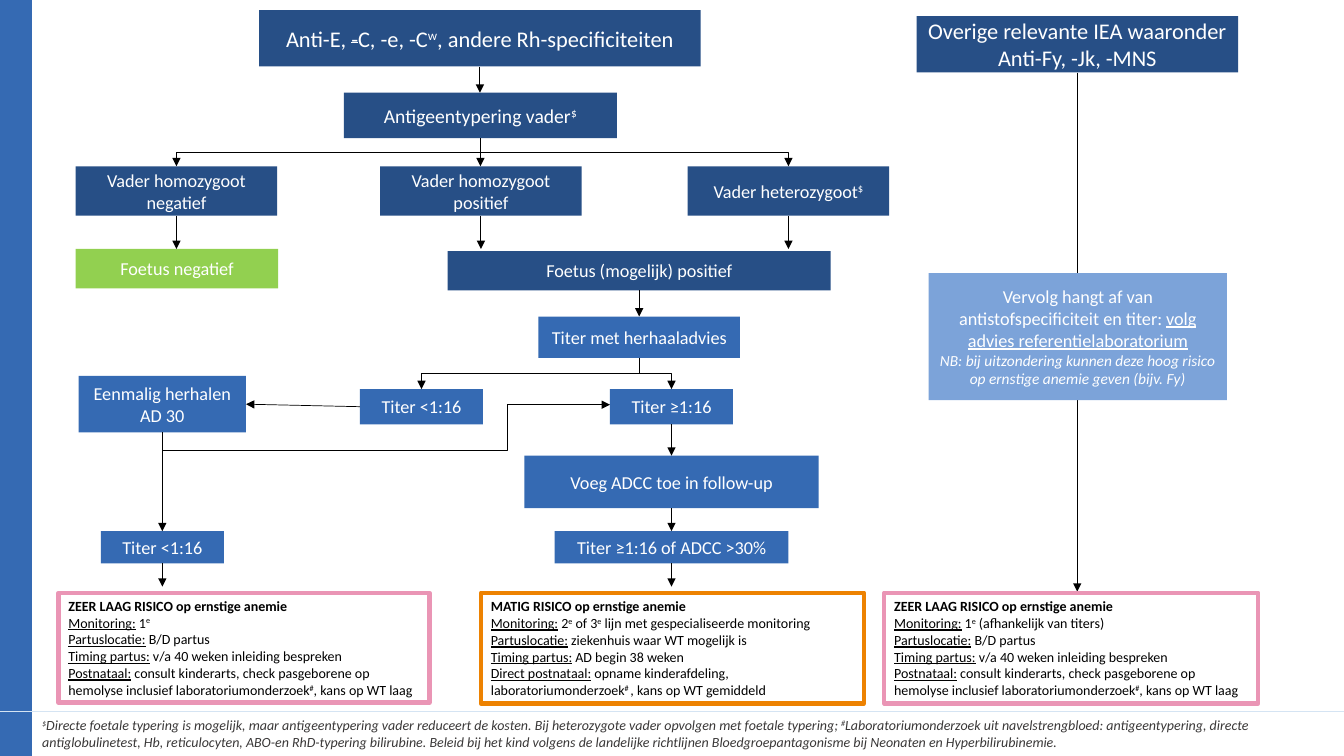
from dataclasses import dataclass

from lxml import etree
from pptx import Presentation
from pptx import util as u
from pptx.dml import color as dml
from pptx.enum import shapes, text
from pptx.oxml import ns

FONT = "Calibri"
COLORS = {
    "navy": "274F86", "blue": "356AB3", "light": "7CA3D9", "green": "92D050",
    "pink": "EA95B5", "orange": "ED8201", "rule": "D5E4F3",
    "grey": "3A3838", "black": "000000", "white": "FFFFFF",
}


def rgb(name):
    return dml.RGBColor.from_string(COLORS[name])


def add_paragraph(frame, runs, size=13, color="white", align=None):
    """Runs are (text, marks); marks: b, i, u, s (strike), ^ (superscript)."""
    first = frame.paragraphs[0]
    paragraph = frame.add_paragraph() if first.runs else first
    paragraph.alignment = align
    for words, marks in runs:
        run = paragraph.add_run()
        run.text = words
        font = run.font
        font.name, font.size, font.color.rgb = FONT, u.Pt(size), rgb(color)
        font.bold, font.italic, font.underline = (mark in marks for mark in "biu")
        properties = run._r.get_or_add_rPr()
        if "s" in marks:
            properties.set("strike", "sngStrike")
        if "^" in marks:
            properties.set("baseline", "30000")


@dataclass
class Box:
    left: float
    top: float
    width: float
    height: float

    @property
    def center(self):
        return self.left + self.width / 2

    @property
    def middle(self):
        return self.top + self.height / 2

    @property
    def bottom(self):
        return self.top + self.height

    @property
    def right(self):
        return self.left + self.width


@dataclass
class Region:
    """A part of the slide; everything in it is measured from its corner."""
    slide: object
    left: float
    top: float

    def rectangle(self, box, fill=None, line=None, weight=1):
        shape = self.slide.shapes.add_shape(
            shapes.MSO_SHAPE.RECTANGLE, u.Inches(self.left + box.left),
            u.Inches(self.top + box.top), u.Inches(box.width), u.Inches(box.height))
        shape.shadow.inherit = False
        if fill:
            shape.fill.solid()
            shape.fill.fore_color.rgb = rgb(fill)
        else:
            shape.fill.background()
        if line:
            shape.line.color.rgb = rgb(line)
            shape.line.width = u.Pt(weight)
        else:
            shape.line.fill.background()
        shape.text_frame.word_wrap = True
        shape.text_frame.vertical_anchor = text.MSO_ANCHOR.MIDDLE
        return shape

    def node(self, at, words, fill="blue", size=13):
        box = Box(*at)
        runs = [(words, "")] if isinstance(words, str) else words
        frame = self.rectangle(box, fill).text_frame
        add_paragraph(frame, runs, size, align=text.PP_ALIGN.CENTER)
        return box

    def connect(self, start, end, kind=shapes.MSO_CONNECTOR.STRAIGHT,
                color="black", weight=0.75, arrow=True):
        connector = self.slide.shapes.add_connector(
            kind, u.Inches(self.left + start[0]), u.Inches(self.top + start[1]),
            u.Inches(self.left + end[0]), u.Inches(self.top + end[1]))
        connector.line.color.rgb = rgb(color)
        connector.line.width = u.Pt(weight)
        if arrow:
            line = connector.line._get_or_add_ln()
            etree.SubElement(line, ns.qn("a:tailEnd"), type="triangle")
        etree.SubElement(connector._element.spPr, ns.qn("a:effectLst"))
        return connector

    def down(self, upper, lower_edge, weight=0.75):
        self.connect((upper.center, upper.bottom), (upper.center, lower_edge),
                     weight=weight)

    def elbow(self, start, end, rotation, flips="", bends=(), weight=0.75):
        """An elbow that leaves its start vertically: a turned preset."""
        (x1, y1), (x2, y2) = start, end
        width, height = abs(y2 - y1), abs(x2 - x1)
        left, top = (x1 + x2 - width) / 2, (y1 + y2 - height) / 2
        connector = self.connect((left, top), (left + width, top + height),
                                 shapes.MSO_CONNECTOR.ELBOW, weight=weight)
        properties = connector._element.spPr
        properties.xfrm.set("rot", str(rotation * 60000))
        for flip in flips:
            properties.xfrm.set("flip" + flip, "1")
        if bends:
            geometry = properties.find(ns.qn("a:prstGeom"))
            geometry.set("prst", f"bentConnector{len(bends) + 2}")
            for number, bend in enumerate(bends, 1):
                etree.SubElement(geometry.find(ns.qn("a:avLst")), ns.qn("a:gd"),
                                 name=f"adj{number}", fmla=f"val {round(bend * 100000)}")

    def branch(self, upper, lower):
        rotation, flips = (90, "") if lower.center < upper.center else (270, "H")
        self.elbow((upper.center, upper.bottom), (lower.center, lower.top),
                   rotation, flips)


def rhesus_flow(slide, left, top):
    region = Region(slide, left, top)
    # Antibody and typing of the father
    antibody = region.node(
        (1.82, 0, 4.38, 0.56),
        [("Anti-E, ", ""), ("-", "s"), ("C, -e, -C", ""), ("w", "^"),
         (", andere Rh-specificiteiten", "")], "navy", 16)
    typing = region.node((2.66, 0.82, 2.71, 0.45),
                         [("Antigeentypering vader", ""), ("$", "^")], "navy", 14)
    negative, positive, mixed = (
        region.node((x, 1.55, 2, 0.49), words, "navy") for x, words in (
            (0, "Vader homozygoot negatief"),
            (3.02, "Vader homozygoot positief"),
            (6.07, [("Vader heterozygoot", ""), ("$", "^")])))
    # Foetus and titers
    foetus_negative = region.node((0, 2.37, 2.01, 0.39), "Foetus negatief", "green")
    foetus = region.node((3.69, 2.39, 3.8, 0.39), "Foetus (mogelijk) positief", "navy")
    titer = region.node((4.59, 3.04, 2, 0.41), "Titer met herhaaladvies")
    low = region.node((2.82, 3.76, 1.22, 0.35), "Titer <1:16")
    high = region.node((5.3, 3.76, 1.22, 0.35), "Titer ≥1:16")
    repeat = region.node((0.03, 3.63, 1.66, 0.56), "Eenmalig herhalen AD 30")
    follow_up = region.node((4.45, 4.42, 2.92, 0.52), "Voeg ADCC toe in follow-up")
    low_result = region.node((0.25, 5.17, 1.22, 0.32), "Titer <1:16")
    high_result = region.node((4.75, 5.17, 2.32, 0.32), "Titer ≥1:16 of ADCC >30%")
    # Arrows
    for upper, lower in ((antibody, typing), (typing, positive),
                         (negative, foetus_negative), (foetus, titer)):
        region.down(upper, lower.top)
    for father in (positive, mixed):
        region.down(father, foetus_negative.top)
    for upper, lower in ((high, follow_up), (follow_up, high_result),
                         (repeat, low_result)):
        region.down(upper, lower.top, 0.5)
    for result in (low_result, high_result):
        region.down(result, 5.72, 0.5)
    for upper, lower in ((typing, negative), (typing, mixed), (titer, low), (titer, high)):
        region.branch(upper, lower)
    region.connect((low.left, low.middle), (repeat.right, repeat.middle), weight=0.5)
    region.elbow((repeat.center, repeat.bottom), (high.left, high.middle - 0.02),
                 90, "HV", (-0.66, 0.77), 0.5)


def other_flow(slide, left, top):
    region = Region(slide, left, top)
    header = region.node((0, 0, 3.19, 0.56),
                         "Overige relevante IEA waaronder Anti-Fy, -Jk, -MNS", "navy", 16)
    region.down(header, 5.71)
    # Advice over the long arrow
    frame = region.rectangle(Box(0.12, 2.55, 2.96, 1.26), "light").text_frame
    center = text.PP_ALIGN.CENTER
    add_paragraph(frame, [("Vervolg hangt af van antistofspecificiteit en titer: ", ""),
                          ("volg advies referentielaboratorium", "u")], align=center)
    add_paragraph(frame, [("NB: bij uitzondering kunnen deze hoog risico op ernstige "
                           "anemie geven (bijv. Fy)", "i")], 11, align=center)


def risk_box(slide, left, top, width, height, title, rows, line, anchor):
    shape = Region(slide, left, top).rectangle(Box(0, 0, width, height), None, line, 3)
    frame = shape.text_frame
    frame.vertical_anchor = anchor
    add_paragraph(frame, [(title + " RISICO op ernstige anemie", "b")], 10, "black")
    for label, *runs in rows:
        add_paragraph(frame, [(label + ":", "u"), *runs], 10, "black")


def very_low_risk(slide, left, top, width, height, care=""):
    rows = [("Monitoring", (" 1", ""), ("e", "^"), *([(care, "")] if care else [])),
            ("Partuslocatie", (" B/D partus", "")),
            ("Timing partus", (" v/a 40 weken inleiding bespreken", "")),
            ("Postnataal", (" consult kinderarts, check pasgeborene op hemolyse "
                            "inclusief laboratoriumonderzoek", ""),
             ("#", "^"), (", kans op WT laag", ""))]
    risk_box(slide, left, top, width, height, "ZEER LAAG", rows, "pink",
             text.MSO_ANCHOR.MIDDLE)


def moderate_risk(slide, left, top, width, height):
    rows = [("Monitoring", (" 2", ""), ("e", "^"), (" of 3", ""), ("e", "^"),
             (" lijn met gespecialiseerde monitoring", "")),
            ("Partuslocatie", (" ziekenhuis waar WT mogelijk is", "")),
            ("Timing partus", (" AD begin 38 weken", "")),
            ("Direct postnataal", (" opname kinderafdeling, laboratoriumonderzoek", ""),
             ("# ", "^"), (", kans op WT gemiddeld", ""))]
    risk_box(slide, left, top, width, height, "MATIG", rows, "orange", text.MSO_ANCHOR.TOP)


def footnote(slide, left, top, width, height):
    Region(slide, 0, top).connect((0, 0), (13.33, 0), color="rule", arrow=False)
    frame = slide.shapes.add_textbox(*map(u.Inches, (left, top, width, height))).text_frame
    frame.word_wrap = True
    add_paragraph(frame, [
        ("$", "i^"),
        ("Directe foetale typering is mogelijk, maar antigeentypering vader reduceert de "
         "kosten. Bij heterozygote vader opvolgen met foetale typering; ", "i"),
        ("#", "i^"),
        ("Laboratoriumonderzoek uit navelstrengbloed: antigeentypering, directe "
         "antiglobulinetest, Hb, reticulocyten, ABO-en RhD-typering bilirubine. Beleid bij "
         "het kind volgens de landelijke richtlijnen Bloedgroepantagonisme bij Neonaten en "
         "Hyperbilirubinemie.", "i")], 10, "grey")


def main():
    presentation = Presentation()
    presentation.slide_width, presentation.slide_height = u.Inches(13.33), u.Inches(7.5)
    slide = presentation.slides.add_slide(presentation.slide_layouts[6])
    # Side bar
    Region(slide, 0, 0).rectangle(Box(0, 0, 0.31, 7.5), "blue", "blue")
    # Flows, outcomes and footnote
    rhesus_flow(slide, 0.75, 0.1)
    other_flow(slide, 9.09, 0.16)
    very_low_risk(slide, 0.58, 5.88, 3.68, 1.09)
    moderate_risk(slide, 4.77, 5.88, 3.8, 1.1)
    very_low_risk(slide, 8.77, 5.88, 3.71, 1.1, " (afhankelijk van titers)")
    footnote(slide, 0.32, 7.06, 13, 0.44)
    presentation.save("out.pptx")


if __name__ == "__main__":
    main()
